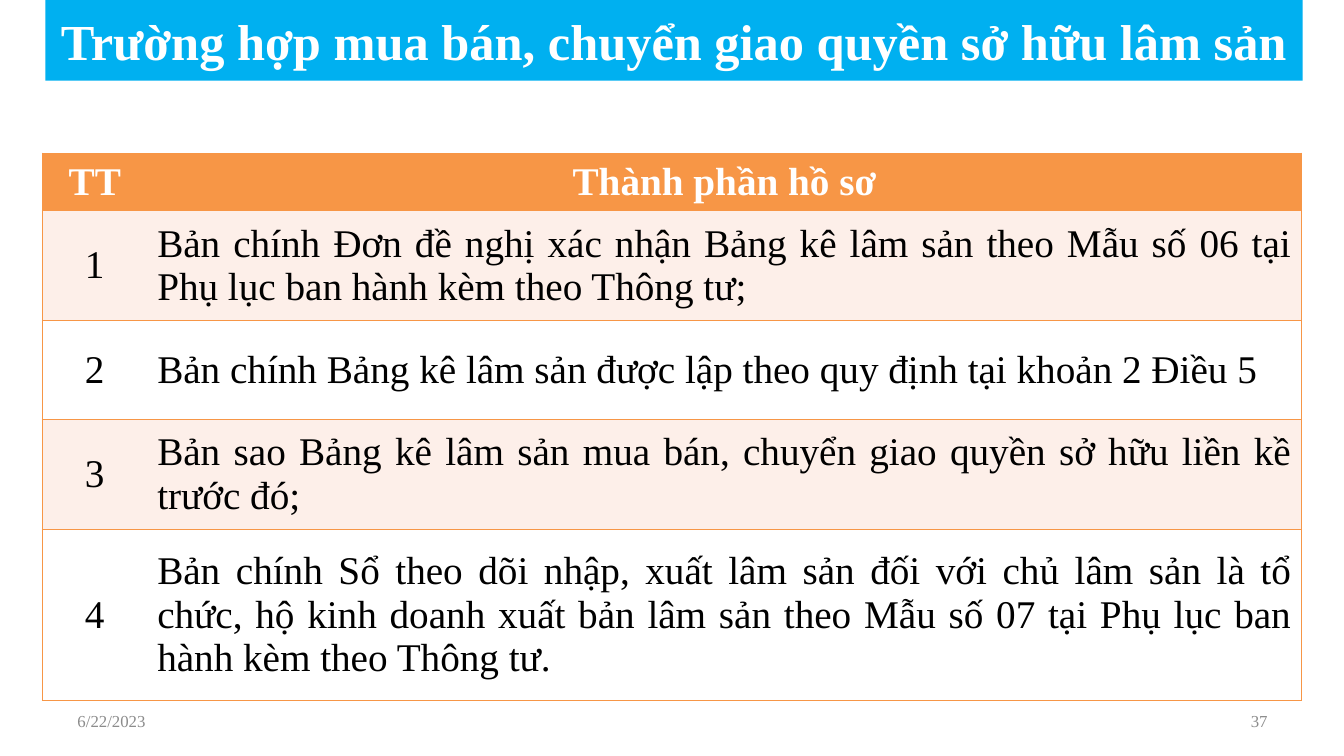
from lxml import etree
from pptx import Presentation
from pptx import util as u
from pptx.dml.color import RGBColor
from pptx.enum import shapes, text
from pptx.oxml import ns

WIDTH, HEIGHT = u.Inches(13.33), u.Inches(7.5)
FONT = "Times New Roman"
COLORS = {
    "banner": "00B0F0",
    "accent": "F79646",
    "band": "FDEFE9",
    "white": "FFFFFF",
    "ink": "000000",
    "muted": "8C8C8C",
}
COLUMNS = [1.04, 11.45]
ROWS = [0.57, 1.09, 0.98, 1.09, 1.7]
HEADINGS = ["TT", "Thành phần hồ sơ"]
DOCUMENTS = [
    "Bản chính Đơn đề nghị xác nhận Bảng kê lâm sản theo Mẫu số 06 tại Phụ lục ban hành kèm theo Thông tư;",
    "Bản chính Bảng kê lâm sản được lập theo quy định tại khoản 2 Điều 5",
    "Bản sao Bảng kê lâm sản mua bán, chuyển giao quyền sở hữu liền kề trước đó;",
    "Bản chính Sổ theo dõi nhập, xuất lâm sản đối với chủ lâm sản là tổ chức, hộ kinh doanh xuất bản lâm sản theo Mẫu số 07 tại Phụ lục ban hành kèm theo Thông tư.",
]
ALIGN = text.PP_ALIGN


def color(name):
    return RGBColor.from_string(COLORS[name])


def paint(item, name):
    item.fill.solid()
    item.fill.fore_color.rgb = color(name)


def write(frame, words, size, ink, align, bold=False):
    para = frame.paragraphs[0]
    para.text = words
    para.alignment = align
    para.font.name = FONT
    para.font.size = u.Pt(size)
    para.font.bold = bold
    para.font.color.rgb = color(ink)


def add_banner(page, words):
    box = page.shapes.add_shape(
        shapes.MSO_SHAPE.RECTANGLE, u.Inches(0.45), 0, u.Inches(12.47), u.Inches(0.8))
    box.shadow.inherit = False
    paint(box, "banner")
    box.line.fill.background()
    box.text_frame.word_wrap = True
    box.text_frame.vertical_anchor = text.MSO_ANCHOR.MIDDLE
    write(box.text_frame, words, 36, "white", ALIGN.CENTER, True)


def set_borders(cell, hidden_side):
    properties = cell._tc.get_or_add_tcPr()
    for side in "LRTB":
        line = etree.SubElement(properties, ns.qn(f"a:ln{side}"), w=str(u.Pt(1)))
        if side == hidden_side:
            etree.SubElement(line, ns.qn("a:noFill"))
        else:
            fill = etree.SubElement(line, ns.qn("a:solidFill"))
            etree.SubElement(fill, ns.qn("a:srgbClr"), val=COLORS["accent"])


def add_documents(page):
    table = page.shapes.add_table(
        len(ROWS), len(COLUMNS), u.Inches(0.42), u.Inches(1.52),
        u.Inches(sum(COLUMNS)), u.Inches(sum(ROWS))).table
    for column, width in zip(table.columns, COLUMNS):
        column.width = u.Inches(width)
    for row, height in zip(table.rows, ROWS):
        row.height = u.Inches(height)
    numbered = [[str(n), words] for n, words in enumerate(DOCUMENTS, 1)]
    for r, entries in enumerate([HEADINGS] + numbered):
        header = r == 0
        fill = "accent" if header else "band" if r % 2 else "white"
        for c, words in enumerate(entries):
            cell = table.cell(r, c)
            set_borders(cell, "RL"[c])
            paint(cell, fill)
            cell.vertical_anchor = text.MSO_ANCHOR.MIDDLE
            align = ALIGN.CENTER if header or c == 0 else ALIGN.JUSTIFY
            write(cell.text_frame, words, 28, "white" if header else "ink", align, header)


def add_footer(page, left, words, align):
    box = page.shapes.add_textbox(
        u.Inches(left), u.Inches(6.95), u.Inches(3.11), u.Inches(0.4))
    box.text_frame.word_wrap = True
    box.text_frame.vertical_anchor = text.MSO_ANCHOR.MIDDLE
    write(box.text_frame, words, 12, "muted", align)


def main():
    deck = Presentation()
    deck.slide_width, deck.slide_height = WIDTH, HEIGHT
    page = deck.slides.add_slide(deck.slide_layouts[6])
    add_banner(page, "Trường hợp mua bán, chuyển giao quyền sở hữu lâm sản")
    add_documents(page)
    add_footer(page, 0.67, "6/22/2023", ALIGN.LEFT)
    add_footer(page, 9.56, "37", ALIGN.RIGHT)
    deck.save("out.pptx")


if __name__ == "__main__":
    main()
